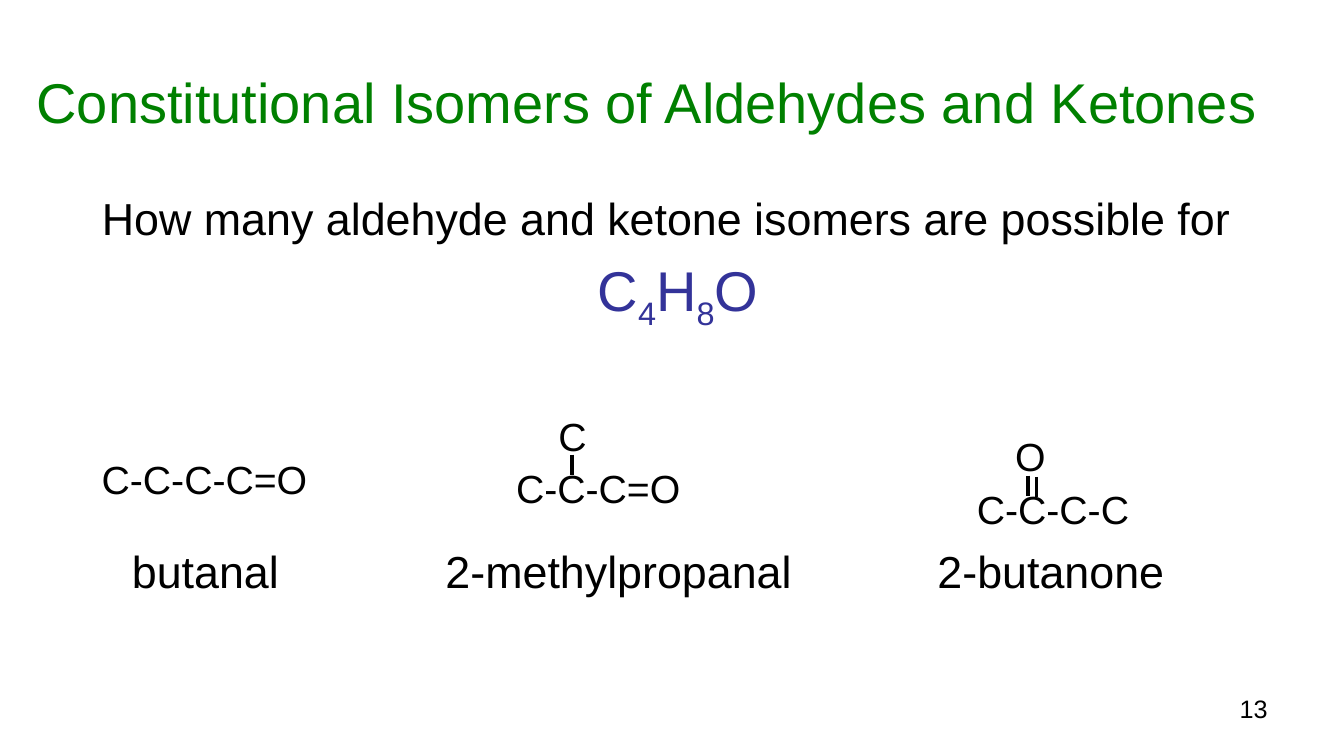
from dataclasses import dataclass

from lxml.etree import SubElement
from pptx import Presentation
from pptx.dml.color import RGBColor
from pptx.enum.shapes import MSO_CONNECTOR
from pptx.enum.text import MSO_ANCHOR, MSO_AUTO_SIZE, PP_ALIGN
from pptx.oxml.ns import qn
from pptx.shapes.group import GroupShape
from pptx.text.text import TextFrame, _Paragraph
from pptx.util import Inches, Pt


@dataclass(frozen=True)
class Theme:
    font: str = "Arial"
    title_color: str = "008000"
    formula_color: str = "333399"
    text_color: str = "000000"
    title_size: int = 40
    text_size: int = 32
    atom_size: int = 28
    number_size: int = 18
    bond_width: float = 2.75


@dataclass(frozen=True)
class Label:
    text: str
    left: float
    top: float
    width: float
    height: float = 0.57
    size: int = 28
    wrap: bool = False


@dataclass(frozen=True)
class Bond:
    x: float
    top: float
    length: float = 0.2


@dataclass(frozen=True)
class Isomer:
    labels: tuple[Label, ...]
    bonds: tuple[Bond, ...] = ()


THEME = Theme()


def name_label(text: str, left: float, width: float) -> Label:
    return Label(text, left, 5.34, width, 0.64, THEME.text_size)


ISOMERS = (
    Isomer((name_label("butanal", 1.21, 1.67),
            Label("C-C-C-C=O", 0.91, 4.47, 2.27))),
    Isomer((name_label("2-methylpropanal", 4.32, 3.66),
            Label("C-C-C=O", 5.02, 4.56, 1.85),
            Label("C", 5.44, 4.04, 0.46, wrap=True)),
           (Bond(5.67, 4.51),)),
    Isomer((name_label("2-butanone", 9.2, 2.47),
            Label("C-C-C-C", 9.59, 4.77, 1.73),
            Label("O", 9.97, 4.24, 0.46, wrap=True)),
           (Bond(10.2, 4.72), Bond(10.28, 4.73))),
)


def add_text(para: _Paragraph, text: str, *, size: int = THEME.text_size,
             color: str = THEME.text_color, align: PP_ALIGN = PP_ALIGN.LEFT,
             subscript: bool = False) -> None:
    para.alignment = align
    span = para.add_run()
    span.text = text
    span.font.name = THEME.font
    span.font.size = Pt(size)
    span.font.color.rgb = RGBColor.from_string(color)
    if subscript:
        span._r.get_or_add_rPr().set("baseline", "-25000")


def place(box, left: float, top: float, width: float, height: float) -> TextFrame:
    """Move a placeholder and return its text frame, without autofit."""
    box.left, box.top = Inches(left), Inches(top)
    box.width, box.height = Inches(width), Inches(height)
    box.text_frame.auto_size = MSO_AUTO_SIZE.NONE
    return box.text_frame


def remove_bullet(para: _Paragraph) -> None:
    properties = para._p.get_or_add_pPr()
    properties.set("marL", "0")
    properties.set("indent", "0")
    SubElement(properties, qn("a:buNone"))


def add_bond(group: GroupShape, bond: Bond) -> None:
    line = group.shapes.add_connector(
        MSO_CONNECTOR.STRAIGHT, Inches(bond.x), Inches(bond.top),
        Inches(bond.x), Inches(bond.top + bond.length))
    line.line.color.rgb = RGBColor.from_string(THEME.text_color)
    line.line.width = Pt(THEME.bond_width)
    SubElement(line.element.spPr, qn("a:effectLst"))


def add_label(shapes, label: Label, align: PP_ALIGN = PP_ALIGN.LEFT) -> TextFrame:
    box = shapes.add_textbox(Inches(label.left), Inches(label.top),
                             Inches(label.width), Inches(label.height))
    frame = box.text_frame
    frame.word_wrap = label.wrap
    add_text(frame.paragraphs[0], label.text, size=label.size, align=align)
    return frame


def add_isomer(shapes, isomer: Isomer) -> None:
    group = shapes.add_group_shape()
    for label in isomer.labels:
        frame = add_label(group.shapes, label)
        frame.auto_size = MSO_AUTO_SIZE.SHAPE_TO_FIT_TEXT
    for bond in isomer.bonds:
        add_bond(group, bond)


def add_question(body) -> None:
    frame = place(body, 0.91, 1.84, 11.63, 1.46)
    frame.vertical_anchor = MSO_ANCHOR.TOP
    question, formula = frame.paragraphs[0], frame.add_paragraph()
    question.space_before, formula.space_before = Pt(0), Pt(8)
    add_text(question, "How many aldehyde and ketone isomers are possible for")
    for symbol in "C4H8O":
        add_text(formula, symbol, size=THEME.title_size, color=THEME.formula_color,
                 align=PP_ALIGN.CENTER, subscript=symbol.isdigit())
    for para in frame.paragraphs:
        remove_bullet(para)


def main() -> None:
    deck = Presentation()
    deck.slide_width, deck.slide_height = Inches(13.33), Inches(7.5)
    page = deck.slides.add_slide(deck.slide_layouts[1])

    title = place(page.shapes.title, 0.16, 0.38, 12.5, 1.25)
    title.vertical_anchor = MSO_ANCHOR.MIDDLE
    add_text(title.paragraphs[0], "Constitutional Isomers of Aldehydes and Ketones",
             size=THEME.title_size, color=THEME.title_color, align=PP_ALIGN.CENTER)

    add_question(page.placeholders[1])
    add_label(page.shapes, Label("13", 9.56, 6.83, 3.11, 0.52, THEME.number_size, True),
              PP_ALIGN.RIGHT)
    for isomer in ISOMERS:
        add_isomer(page.shapes, isomer)

    deck.save("out.pptx")


if __name__ == "__main__":
    main()
